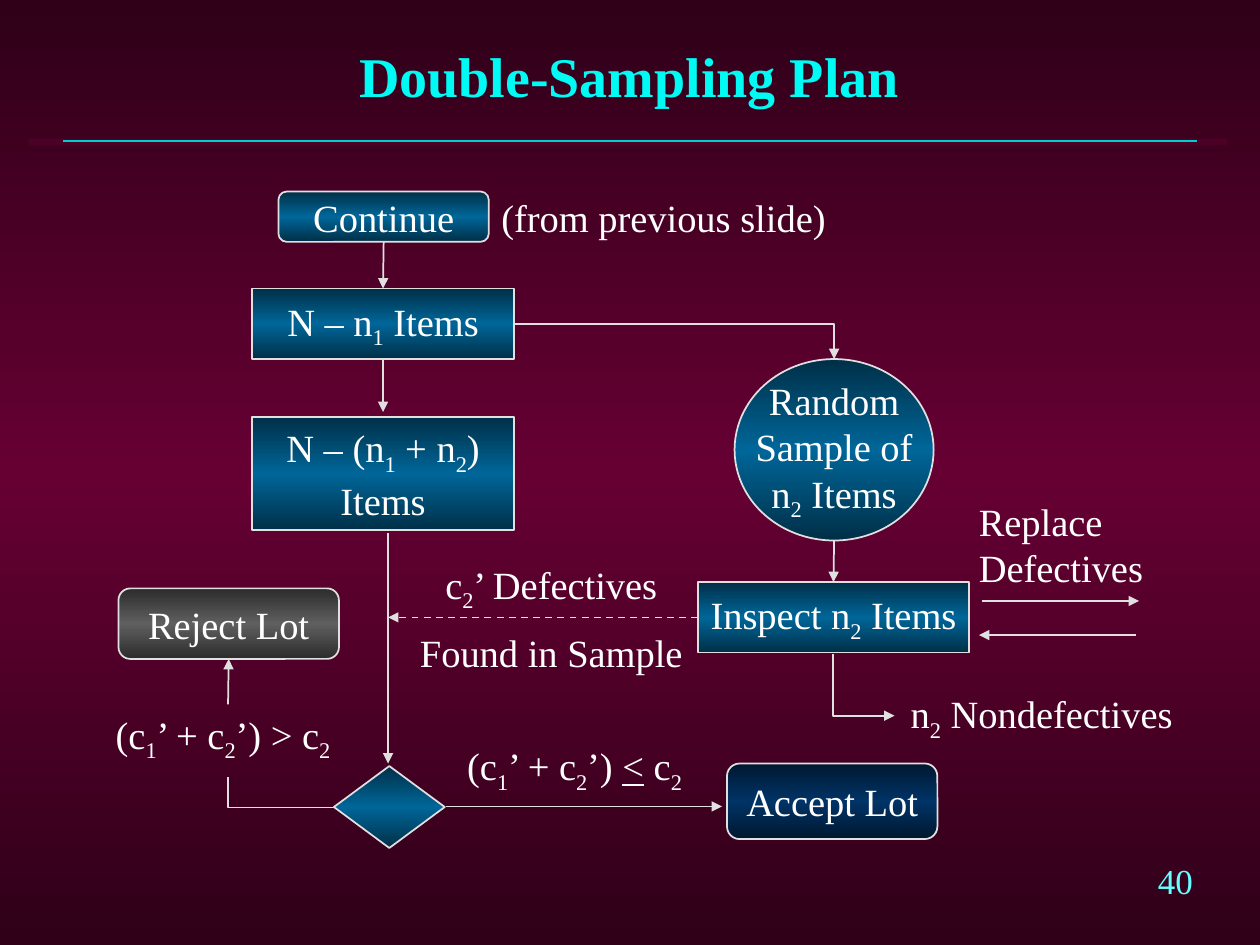
"""Build the double-sampling plan flowchart slide."""
from copy import deepcopy
from dataclasses import dataclass
from typing import Optional

from pptx import Presentation
from pptx import util as u
from pptx.dml import color
from pptx.enum import dml, shapes, text
from pptx.oxml import parse_xml
from pptx.oxml import ns

FONT = "Times New Roman"
WHITE, OUTLINE = "FFFFFF", "E0E0E0"
BLUE, GREY, NAVY = ("002F47", "006699"), ("2C2C2C", "5F5F5F"), ("001830", "003366")
MAROON = ("2F0018", "660033")
RECT = shapes.MSO_SHAPE.RECTANGLE
ROUND = shapes.MSO_SHAPE.ROUNDED_RECTANGLE
OVAL = shapes.MSO_SHAPE.OVAL
DIAMOND = shapes.MSO_SHAPE.DIAMOND
LEFT, CENTER = text.PP_ALIGN.LEFT, text.PP_ALIGN.CENTER
TOP, LEFT_SIDE, BOTTOM, RIGHT_SIDE = range(4)


@dataclass(frozen=True)
class Step:
    name: str
    box: tuple
    geometry: shapes.MSO_SHAPE = RECT
    lines: tuple = ()
    gradient: tuple = BLUE


@dataclass(frozen=True)
class Label:
    box: tuple
    lines: tuple
    align: text.PP_ALIGN = LEFT
    anchor: text.MSO_ANCHOR = text.MSO_ANCHOR.TOP
    wrap: bool = False
    size: float = 22
    tint: str = WHITE
    bold: bool = False
    gap: float = 0
    shadow: bool = False


@dataclass(frozen=True)
class Flow:
    start: tuple
    end: tuple
    source: Optional[tuple] = None
    target: Optional[tuple] = None
    arrow: Optional[str] = "tailEnd"
    bent: bool = False
    dashed: bool = False
    tint: str = OUTLINE


STEPS = (
    Step("first remainder", (2, 2.29, 2.08, 0.56), lines=("N – n_1 Items",)),
    Step("sample", (5.83, 2.85, 1.58, 1.44), OVAL, ("Random", "Sample of", "n_2 Items")),
    Step("second remainder", (2, 3.31, 2.08, 0.9), lines=("N – (n_1 + n_2)", "Items")),
    Step("inspect", (5.54, 4.62, 2.15, 0.56), lines=("Inspect n_2 Items",)),
    Step("decision", (2.65, 6.08, 0.88, 0.65), DIAMOND),
    Step("reject", (0.94, 4.67, 1.75, 0.56), ROUND, ("Reject Lot",), GREY),
    Step("accept", (5.77, 6.06, 1.67, 0.6), ROUND, ("Accept Lot",), NAVY),
    Step("continue", (2.21, 1.52, 1.67, 0.4), ROUND, ("Continue",)),
)
LABELS = (
    Label((0.33, 0.08, 9.33, 1.04), ("Double-Sampling Plan",), CENTER, text.MSO_ANCHOR.MIDDLE,
          wrap=True, size=32, tint="00FAF4", bold=True, shadow=True),
    Label((9.09, 6.77, 0.52, 0.43), ("40",), size=20, tint="66FFFF"),
    Label((0.82, 5.59, 2, 0.47), ("(c_1’ + c_2’) > c_2",), wrap=True),
    Label((7.67, 3.9, 1.51, 0.83), ("Replace", "Defectives")),
    Label((7.13, 5.43, 2.3, 0.47), ("n_2 Nondefectives",)),
    Label((3.23, 4.4, 2.29, 0.97), ("c_2’ Defectives", "Found in Sample"), CENTER, gap=9),
    Label((3.61, 5.84, 1.98, 0.47), ("(c_1’ + c_2’) < c_2",)),
    Label((3.88, 1.49, 2.78, 0.47), ("(from previous slide)",)),
)
FLOWS = (
    Flow((0.5, 1.12), (9.5, 1.12), arrow=None, tint="00CECE"),
    Flow((3.04, 1.92), (3.04, 2.29), ("continue", BOTTOM), ("first remainder", TOP)),
    Flow((3.04, 2.85), (3.04, 3.27), ("first remainder", BOTTOM)),
    Flow((3.08, 4.23), (3.08, 6.06)),
    Flow((6.62, 4.29), (6.62, 4.62), target=("inspect", TOP)),
    Flow((5.54, 4.9), (3.08, 4.9), ("inspect", LEFT_SIDE), dashed=True),
    Flow((4.08, 2.57), (6.62, 2.85), bent=True),
    Flow((7.79, 4.77), (9.04, 4.77)),
    Flow((9.02, 5.04), (7.77, 5.04)),
    Flow((7.1, 5.68), (6.61, 5.19), arrow="headEnd", bent=True),
    Flow((3.54, 6.4), (5.73, 6.4)),
    Flow((2.65, 6.41), (1.81, 6.17), arrow=None, bent=True),
    Flow((1.81, 5.59), (1.81, 5.23), target=("reject", BOTTOM)),
)


def rgb(value: str) -> color.RGBColor:
    """Turn a hex string into a colour."""
    return color.RGBColor.from_string(value)


def element(tag: str, body: str = "", attributes: str = ""):
    """Make one DrawingML element."""
    return parse_xml(f'<a:{tag} {ns.nsdecls("a")} {attributes}>{body}</a:{tag}>')


def paint(fill, owner, gradient: tuple) -> None:
    """Fill with a vertical gradient that is brightest in the middle."""
    edge, middle = gradient
    fill.gradient()
    fill.gradient_angle = 270
    stop_list = owner.find(".//" + ns.qn("a:gsLst"))
    stop_list.append(deepcopy(stop_list[0]))
    for stop, position, tint in zip(fill.gradient_stops, (0, 0.5, 1), (edge, middle, edge)):
        stop.position = position
        stop.color.rgb = rgb(tint)


def add_run(paragraph, words: str, label: Label, marked: bool = False) -> None:
    """Add a run; a marked one is underlined if it is a sign, else lowered."""
    run = paragraph.add_run()
    run.text = words
    values = {"name": FONT, "size": u.Pt(label.size), "bold": label.bold}
    if marked and words == "<":
        values["underline"] = True
    for key, value in values.items():
        setattr(run.font, key, value)
    run.font.color.rgb = rgb(label.tint)
    properties = run.font._element
    if marked and words != "<":
        properties.set("baseline", "-25000")
    if label.shadow:
        shadow = ('<a:outerShdw dist="35921" dir="2700000">'
                  '<a:srgbClr val="000000"/></a:outerShdw>')
        properties.find(ns.qn("a:solidFill")).addnext(element("effectLst", shadow))


def write(frame, label: Label) -> None:
    """Write the lines of a label into a text frame."""
    for key, value in {"word_wrap": label.wrap, "vertical_anchor": label.anchor}.items():
        setattr(frame, key, value)
    for number, line in enumerate(label.lines):
        paragraph = frame.add_paragraph() if number else frame.paragraphs[0]
        paragraph.alignment = label.align
        if number and label.gap:
            paragraph.space_before = u.Pt(label.gap)
        plain, *pieces = line.replace("<", "_<").split("_")
        if plain:
            add_run(paragraph, plain, label)
        for piece in pieces:
            add_run(paragraph, piece[0], label, marked=True)
            if piece[1:]:
                add_run(paragraph, piece[1:], label)


def draw_step(slide, step: Step):
    """Draw one step of the flowchart."""
    shape = slide.shapes.add_shape(step.geometry, *map(u.Inches, step.box))
    shape.shadow.inherit = False
    paint(shape.fill, shape._element, step.gradient)
    shape.line.color.rgb = rgb(OUTLINE)
    shape.line.width = u.Pt(1)
    write(shape.text_frame, Label(step.box, step.lines, CENTER, text.MSO_ANCHOR.MIDDLE))
    return shape


def draw_flow(slide, flow: Flow, steps: dict) -> None:
    """Draw one line or arrow and join it to its steps."""
    kind = shapes.MSO_CONNECTOR.ELBOW if flow.bent else shapes.MSO_CONNECTOR.STRAIGHT
    line = slide.shapes.add_connector(kind, *map(u.Inches, flow.start + flow.end))
    for join, end in ((line.begin_connect, flow.source), (line.end_connect, flow.target)):
        if end:
            join(steps[end[0]], end[1])
    line.line.color.rgb = rgb(flow.tint)
    line.line.width = u.Pt(1)
    if flow.dashed:
        line.line.dash_style = dml.MSO_LINE.DASH
    properties = line._element.spPr
    if flow.bent:
        properties.find(ns.qn("a:prstGeom")).set("prst", "bentConnector2")
    if flow.arrow:
        properties.find(ns.qn("a:ln")).append(element(flow.arrow, attributes='type="triangle"'))
    properties.append(element("effectLst"))


def main() -> None:
    """Build and save the slide."""
    deck = Presentation()
    deck.slide_width, deck.slide_height = u.Inches(10), u.Inches(7.5)
    slide = deck.slides.add_slide(deck.slide_layouts[6])
    paint(slide.background.fill, slide._element, MAROON)
    band = slide.shapes.add_shape(RECT, *map(u.Inches, (0.23, 1.1, 9.51, 0.05)))
    band.shadow.inherit = False
    band.fill.solid()
    band.fill.fore_color.rgb = rgb("4C0026")
    band.line.fill.background()
    steps = {step.name: draw_step(slide, step) for step in STEPS}
    for flow in FLOWS:
        draw_flow(slide, flow, steps)
    for label in LABELS:
        write(slide.shapes.add_textbox(*map(u.Inches, label.box)).text_frame, label)
    deck.save("out.pptx")


if __name__ == "__main__":
    main()
